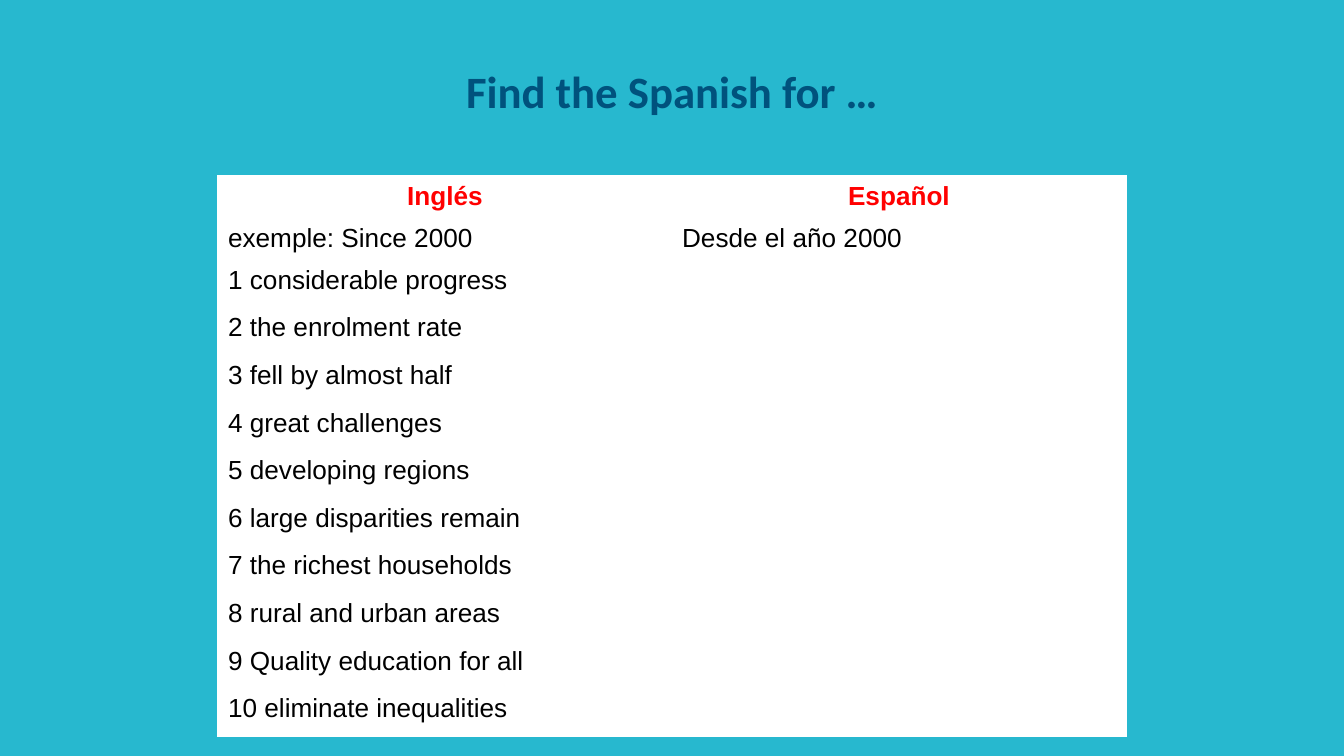
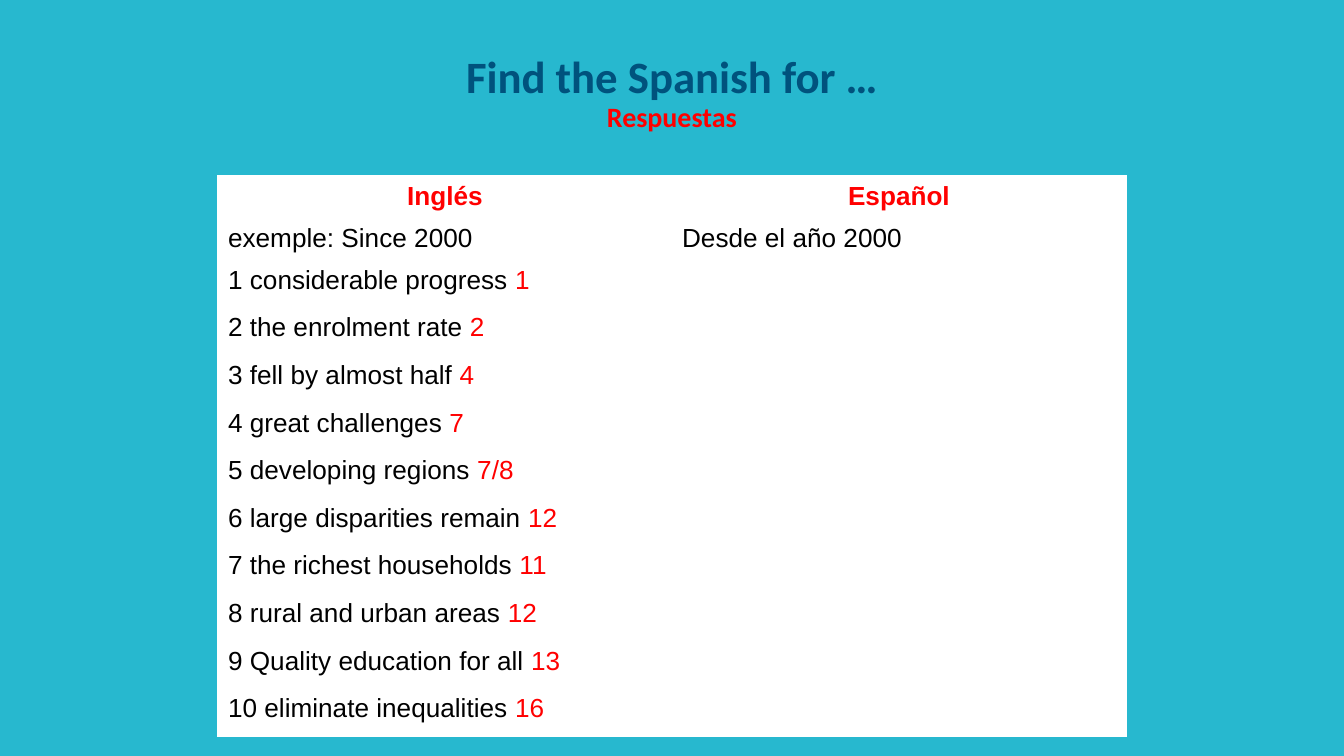
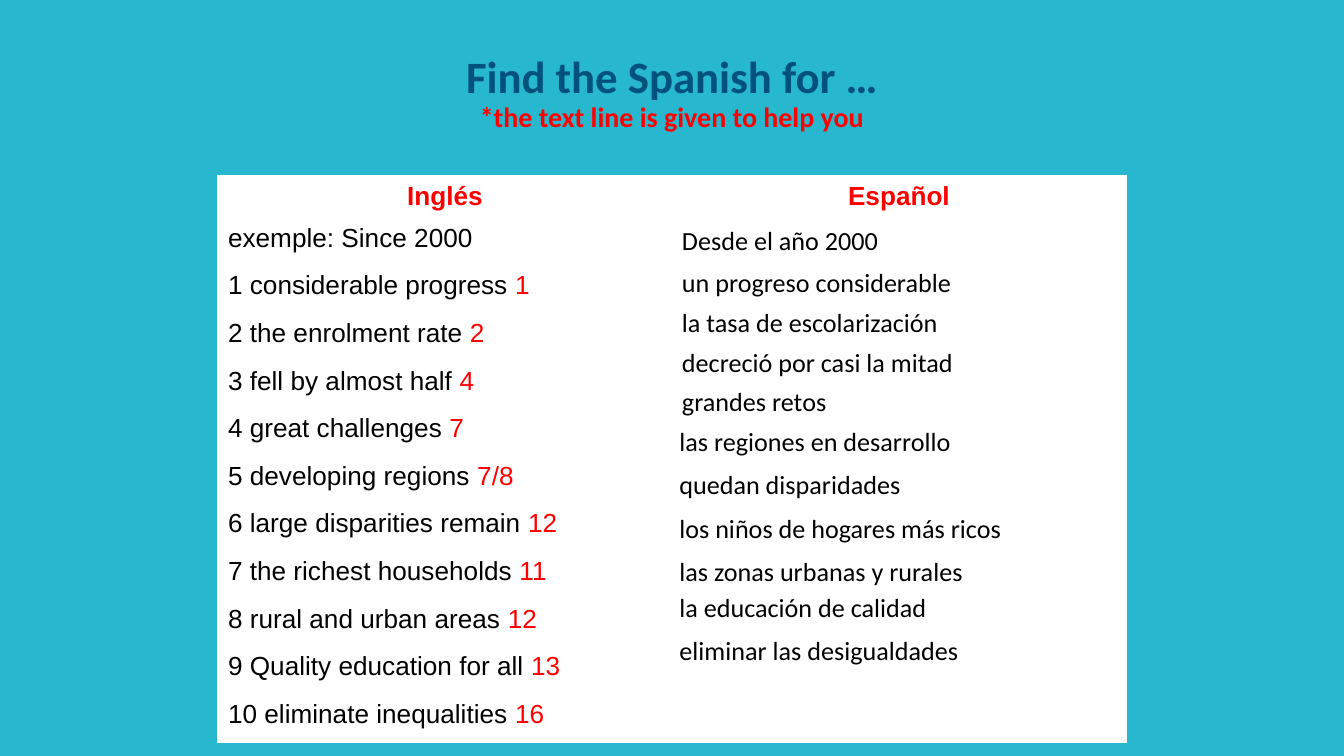
from dataclasses import dataclass

from pptx import Presentation
from pptx import util as u
from pptx.dml import color
from pptx.enum import text

PHRASES = [
    ("considerable progress", "1"),
    ("the enrolment rate", "2"),
    ("fell by almost half", "4"),
    ("great challenges", "7"),
    ("developing regions", "7/8"),
    ("large disparities remain", "12"),
    ("the richest households", "11"),
    ("rural and urban areas", "12"),
    ("Quality education for all", "13"),
    ("eliminate inequalities", "16"),
]
EXAMPLE = "Desde el año 2000"
ANSWERS = [
    (EXAMPLE, 12.7, 4.14, 4.98, 0.66),
    ("un progreso considerable", 12.7, 4.93, 6.55, 0.76),
    ("la tasa de escolarización", 12.7, 5.69, 6.55, 1.14),
    ("decreció por casi la mitad", 12.7, 6.45, 7.16, 0.81),
    ("grandes retos", 12.7, 7.19, 3.2, 0.76),
    ("las regiones en desarrollo", 12.65, 7.95, 7.57, 0.89),
    ("quedan disparidades", 12.65, 8.76, 6.63, 0.89),
    ("los niños de hogares más ricos", 12.65, 9.58, 7.85, 0.74),
    ("las zonas urbanas y rurales", 12.65, 10.39, 7.57, 0.86),
    ("la educación de calidad", 12.65, 11.07, 7.57, 0.76),
    ("eliminar las desigualdades", 12.65, 11.89, 7.85, 0.89),
]


@dataclass(frozen=True)
class Theme:
    background: str = "27B8CF"
    title: str = "00527D"
    accent: str = "FF0000"
    ink: str = "000000"
    cell: str = "FFFFFF"
    heading_font: str = "Calibri"
    table_font: str = "Arial"
    title_size: int = 24
    note_size: int = 15
    body_size: int = 14
    left: float = 4.12
    column: float = 8.58
    row: float = 0.77
    blank_row: float = 0.9
    pad_x: float = 0.19
    pad_y: float = 0.1


class Deck:
    """Builds the vocabulary slides in one shared style."""

    def __init__(self, theme):
        self.t = theme
        self.prs = Presentation()
        self.prs.slide_width, self.prs.slide_height = u.Cm(25.4), u.Cm(14.29)
        self.fill(self.prs.slide_master.background, theme.background)
        self.s = None

    def fill(self, item, rgb):
        item.fill.solid()
        item.fill.fore_color.rgb = color.RGBColor.from_string(rgb)

    def font(self, font, rgb, size):
        font.size = u.Pt(size)
        font.color.rgb = color.RGBColor.from_string(rgb)

    def words(self, p, words, face, size, rgb, bold=False, centred=False):
        p.font.name, p.font.bold = face, bold
        self.font(p.font, rgb, size)
        if centred:
            p.alignment = text.PP_ALIGN.CENTER
        if words:
            p.add_run().text = words

    def accent(self, p, words, size):
        r = p.add_run()
        r.text = words
        self.font(r.font, self.t.accent, size)

    def pad(self, item, pad_y):
        item.margin_left = item.margin_right = u.Cm(self.t.pad_x)
        item.margin_top = item.margin_bottom = u.Cm(pad_y)

    def slide(self):
        self.s = self.prs.slides.add_slide(self.prs.slide_layouts[6])

    def box(self, left, top, width, height):
        sp = self.s.shapes.add_textbox(*map(u.Cm, (left, top, width, height)))
        tf = sp.text_frame
        tf.word_wrap = True
        self.pad(tf, self.t.pad_y)
        return tf

    def title(self, words, note=""):
        t = self.t
        tf = self.box(t.left, 0.58, 2 * t.column, 2.39)
        tf.vertical_anchor = text.MSO_ANCHOR.MIDDLE
        p = tf.paragraphs[0]
        p.line_spacing = 0.9
        self.words(p, words, t.heading_font, t.title_size, t.title, True, True)
        if note:
            p.add_line_break()
            self.accent(p, note, t.note_size)

    def label(self, words, *place):
        t = self.t
        p = self.box(*place).paragraphs[0]
        self.words(p, words, t.heading_font, t.body_size, t.ink)

    def cell(self, cell, words, hint, header):
        t = self.t
        self.fill(cell, t.cell)
        self.pad(cell, t.pad_y if words else 0)
        p = cell.text_frame.paragraphs[0]
        rgb = t.accent if header else t.ink
        self.words(p, words, t.table_font, t.body_size, rgb, header, header)
        if hint:
            self.accent(p, hint, t.body_size)

    def table(self, rows):
        t = self.t
        heights = [u.Cm(t.row if spanish else t.blank_row) for _, _, spanish in rows]
        table = self.s.shapes.add_table(
            len(rows), 2, u.Cm(t.left), u.Cm(3.33), u.Cm(2 * t.column), sum(heights)
        ).table
        table.first_row = table.horz_banding = False
        for i, (english, hint, spanish) in enumerate(rows):
            table.rows[i].height = heights[i]
            self.cell(table.cell(i, 0), english, hint, i == 0)
            self.cell(table.cell(i, 1), spanish, "", i == 0)


def vocabulary(hints, example):
    rows = [("Inglés", "", "Español"), ("exemple: Since 2000", "", example)]
    for n, (phrase, line) in enumerate(PHRASES, 1):
        rows.append((f"{n} {phrase}" + " " * hints, line if hints else "", ""))
    return rows


def main():
    deck = Deck(Theme())
    for note, hints, example, answers in [
        ("", False, EXAMPLE, []),
        ("Respuestas", True, EXAMPLE, []),
        ("*the text line is given to help you", True, "", ANSWERS),
    ]:
        deck.slide()
        deck.title("Find the Spanish for …", note)
        deck.table(vocabulary(hints, example))
        for answer in answers:
            deck.label(*answer)
    deck.prs.save("out.pptx")


if __name__ == "__main__":
    main()
